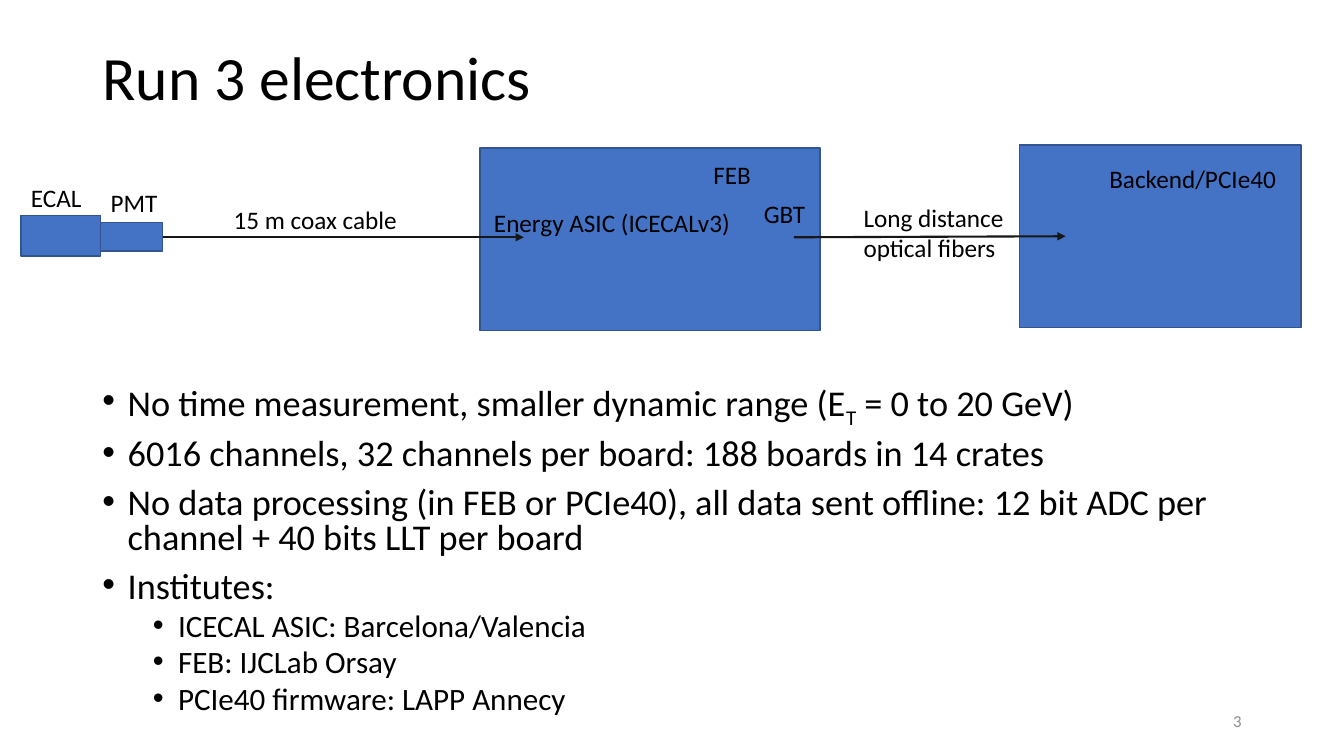
from lxml import etree
from pptx import Presentation
from pptx.dml.color import RGBColor
from pptx.enum.shapes import MSO_CONNECTOR, MSO_SHAPE
from pptx.enum.text import MSO_ANCHOR, MSO_AUTO_SIZE, PP_ALIGN
from pptx.oxml.ns import qn
from pptx.util import Pt

RECTANGLE = MSO_SHAPE.RECTANGLE
STRAIGHT = MSO_CONNECTOR.STRAIGHT
MIDDLE, TOP = MSO_ANCHOR.MIDDLE, MSO_ANCHOR.TOP
LEFT, RIGHT = PP_ALIGN.LEFT, PP_ALIGN.RIGHT
NO_AUTOFIT = MSO_AUTO_SIZE.NONE

PX = 9525
FONT = "Calibri"
COLORS = {"text": "000000", "box": "4472C4", "edge": "325491",
          "arrow": "181717", "number": "8C8C8C"}

TITLE = "Run 3 electronics"
TITLE_BOX = (88, 7, 1104, 139)
BODY_BOX = (88, 362, 1104, 325)
BULLETS = [
    (0, [("No time measurement, smaller dynamic range (E", False), ("T", True),
         (" = 0 to 20 GeV)", False)]),
    (0, [("6016 channels, 32 channels per board: 188 boards in 14 crates", False)]),
    (0, [("No data processing (in FEB or PCIe40), all data sent offline: "
          "12 bit ADC per channel + 40 bits LLT per board", False)]),
    (0, [("Institutes:", False)]),
    (1, [("ICECAL ASIC: Barcelona/Valencia", False)]),
    (1, [("FEB: IJCLab Orsay", False)]),
    (1, [("PCIe40 firmware: LAPP Annecy", False)]),
]
LEVELS = [{"size": 25.9, "before": 10, "indent": 24},
          {"size": 22.2, "before": 5, "indent": 72}]
HANGING = 24

BOXES = [
    (457, 141, 324, 174),
    (20, 205, 76, 39),
    (96, 212, 59, 27),
    (971, 138, 268, 174),
]
ARROWS = [
    (155, 226, 499, 226),
    (756, 226, 1015, 225),
]
LABELS = [
    (["FEB"], (670, 147, 56, 38)),
    (["Energy ASIC (ICECALv3)"], (461, 193, 247, 38)),
    (["Backend/PCIe40"], (1047, 151, 180, 38)),
    (["ECAL"], (20, 169, 68, 38)),
    (["PMT"], (96, 174, 64, 38)),
    (["15 m coax cable"], (213, 190, 177, 38)),
    (["Long distance", "optical fibers"], (813, 188, 160, 68)),
    (["GBT"], (718, 184, 60, 38)),
]
PAGE_NUMBER = "3"
PAGE_NUMBER_BOX = (904, 667, 288, 38)


def emu(lengths):
    return [length * PX for length in lengths]


def place(shape, box):
    shape.left, shape.top, shape.width, shape.height = emu(box)


def add_run(paragraph, text, size, color="text"):
    run = paragraph.add_run()
    run.text = text
    run.font.size = Pt(size)
    run.font.name = FONT
    run.font.color.rgb = RGBColor.from_string(COLORS[color])
    return run


def add_label(slide, lines, box, size=18, color="text", align=LEFT, anchor=TOP):
    shape = slide.shapes.add_textbox(*emu(box))
    frame = shape.text_frame
    frame.word_wrap = False
    frame.vertical_anchor = anchor
    for index, line in enumerate(lines):
        paragraph = frame.add_paragraph() if index else frame.paragraphs[0]
        paragraph.alignment = align
        add_run(paragraph, line, size, color)
    return shape


def add_box(slide, box):
    shape = slide.shapes.add_shape(RECTANGLE, *emu(box))
    shape.shadow.inherit = False
    shape.fill.solid()
    shape.fill.fore_color.rgb = RGBColor.from_string(COLORS["box"])
    shape.line.color.rgb = RGBColor.from_string(COLORS["edge"])
    shape.line.width = Pt(1)


def add_arrow(slide, ends):
    connector = slide.shapes.add_connector(STRAIGHT, *emu(ends))
    connector.line.color.rgb = RGBColor.from_string(COLORS["arrow"])
    connector.line.width = Pt(1.5)
    line = connector._element.spPr.find(qn("a:ln"))
    etree.SubElement(line, qn("a:tailEnd"), type="triangle")
    etree.SubElement(connector._element.spPr, qn("a:effectLst"))


def fill_title(title):
    place(title, TITLE_BOX)
    frame = title.text_frame
    frame.auto_size = NO_AUTOFIT
    frame.vertical_anchor = MIDDLE
    paragraph = frame.paragraphs[0]
    paragraph.alignment = LEFT
    paragraph.line_spacing = 0.9
    add_run(paragraph, TITLE, 44)


def fill_body(body):
    place(body, BODY_BOX)
    frame = body.text_frame
    frame.auto_size = NO_AUTOFIT
    for index, (level, pieces) in enumerate(BULLETS):
        style = LEVELS[level]
        paragraph = frame.add_paragraph() if index else frame.paragraphs[0]
        paragraph.level = level
        paragraph.line_spacing = 0.8
        paragraph.space_before = Pt(style["before"])
        properties = paragraph._p.get_or_add_pPr()
        properties.set("marL", str(style["indent"] * PX))
        properties.set("indent", str(-HANGING * PX))
        etree.SubElement(properties, qn("a:buFont"), typeface="Arial")
        etree.SubElement(properties, qn("a:buChar"), char="•")
        for text, subscript in pieces:
            run = add_run(paragraph, text, style["size"])
            if subscript:
                run.font._element.set("baseline", "-25000")


def main():
    presentation = Presentation()
    presentation.slide_width, presentation.slide_height = emu((1280, 720))
    slide = presentation.slides.add_slide(presentation.slide_layouts[1])
    fill_title(slide.shapes.title)
    fill_body(slide.placeholders[1])
    for box in BOXES:
        add_box(slide, box)
    for ends in ARROWS:
        add_arrow(slide, ends)
    for lines, box in LABELS:
        add_label(slide, lines, box)
    number = add_label(slide, [PAGE_NUMBER], PAGE_NUMBER_BOX, 12, "number", RIGHT, MIDDLE)
    number.text_frame.word_wrap = True
    presentation.save("out.pptx")


if __name__ == "__main__":
    main()
